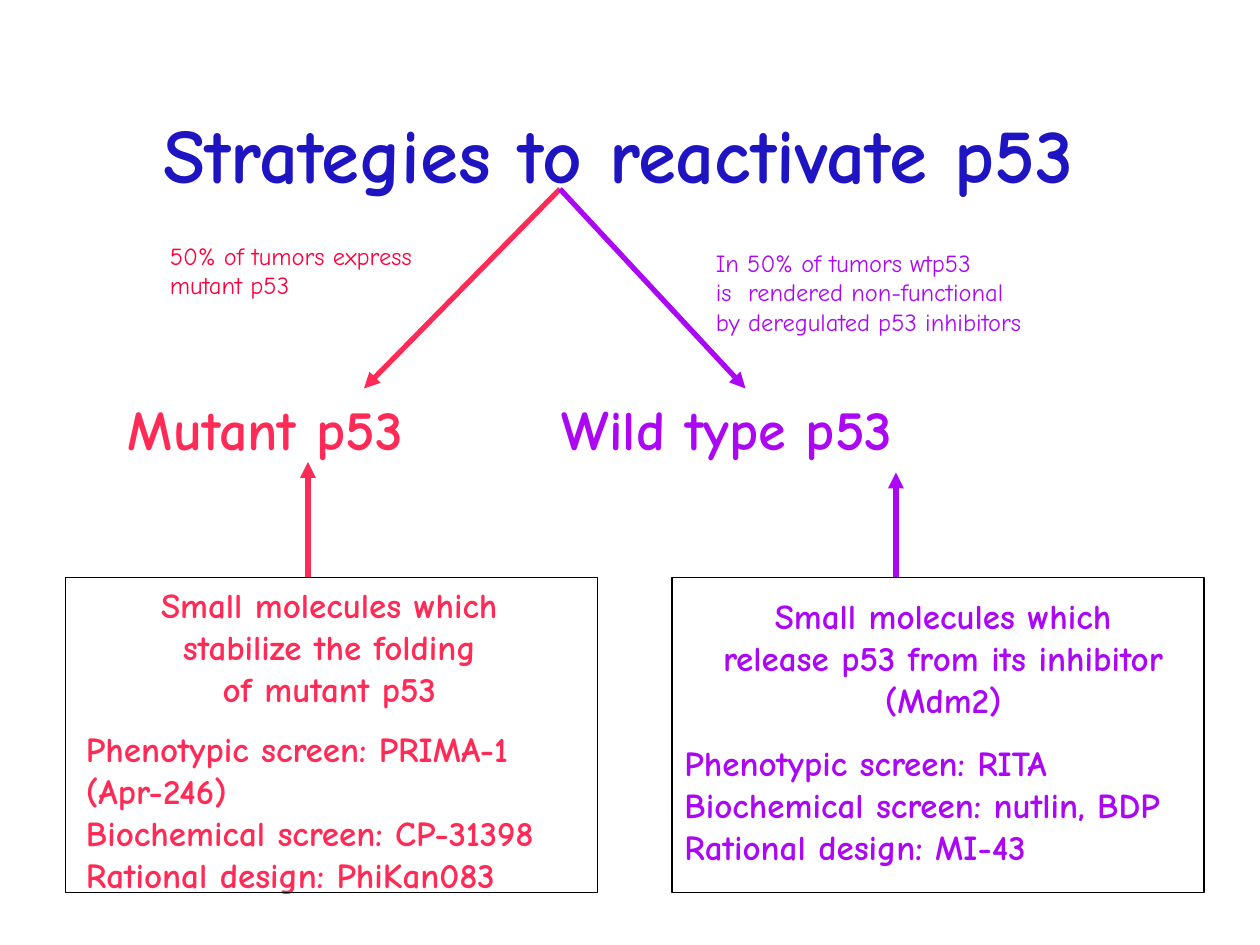
from dataclasses import dataclass

from lxml import etree
from pptx import Presentation
from pptx.dml.color import RGBColor
from pptx.enum.shapes import MSO_CONNECTOR, MSO_SHAPE
from pptx.enum.text import MSO_ANCHOR, PP_ALIGN
from pptx.oxml.ns import qn
from pptx.slide import Slide
from pptx.text.text import _Paragraph, _Run
from pptx.util import Inches, Pt

LEFT = PP_ALIGN.LEFT
CENTER = PP_ALIGN.CENTER
TOP = MSO_ANCHOR.TOP
MIDDLE = MSO_ANCHOR.MIDDLE
STRAIGHT = MSO_CONNECTOR.STRAIGHT
RECTANGLE = MSO_SHAPE.RECTANGLE

BLUE = RGBColor(0x1F, 0x14, 0xC2)
RED = RGBColor(0xFF, 0x2B, 0x56)
CRIMSON = RGBColor(0xFF, 0x00, 0x3C)
PURPLE = RGBColor(0xAC, 0x07, 0xF5)
BLACK = RGBColor(0x00, 0x00, 0x00)

FONT = "Comic Neue"
SLIDE_WIDTH = Inches(10)
SLIDE_HEIGHT = Inches(7.5)
COLUMN = SLIDE_WIDTH // 120
ROW = SLIDE_HEIGHT // 90

FORK = (53.33, 18)
PANEL_TOP = 55
PANEL_WIDTH = 50.67
PANEL_HEIGHT = 30
PANEL_COLUMNS = (6.25, 64)


@dataclass(frozen=True)
class TextBlock:
    column: float
    row: float
    width: float
    height: float
    lines: tuple[str, ...]
    size: int
    color: RGBColor
    bold: bool = True
    alignment: PP_ALIGN = LEFT
    anchor: MSO_ANCHOR = TOP


@dataclass(frozen=True)
class Arrow:
    start: tuple[float, float]
    end: tuple[float, float]
    color: RGBColor


TITLE = TextBlock(4.25, 7, 109.33, 15, ("Strategies to reactivate p53",), 44, BLUE,
                  alignment=CENTER, anchor=MIDDLE)
BRANCH_NAMES = TextBlock(11, 37, 92.5, 8, ("Mutant p53",), 32, RED)
WILD_TYPE_TAB = 41.33

TEXT_BLOCKS = (
    TITLE,
    TextBlock(15, 22.33, 27.25, 7,
              ("50% of tumors express", "mutant p53"), 14, CRIMSON, bold=False),
    TextBlock(67, 23, 35, 10,
              ("In 50% of tumors wtp53", "is  rendered non-functional",
               "by deregulated p53 inhibitors"), 14, PURPLE, bold=False),
    TextBlock(13, 55, 36.75, 13.75,
              ("Small molecules which", "stabilize the folding", "of mutant p53"),
              20, RED, alignment=CENTER),
    TextBlock(65, 56, 49.67, 13.75,
              ("Small molecules which", "release p53 from its inhibitor", "(Mdm2)"),
              20, PURPLE, alignment=CENTER),
    TextBlock(7, 68.67, 49.67, 17.33,
              ("Phenotypic screen: PRIMA-1", "(Apr-246)",
               "Biochemical screen: CP-31398", "Rational design: PhiKan083"), 20, RED),
    TextBlock(64, 70, 49.67, 13.75,
              ("Phenotypic screen: RITA", "Biochemical screen: nutlin, BDP",
               "Rational design: MI-43"), 20, PURPLE),
)

ARROWS = (
    Arrow(FORK, (34.67, 37), RED),
    Arrow(FORK, (71, 37), PURPLE),
    Arrow((29.33, PANEL_TOP), (29.33, 44), RED),
    Arrow((85.33, PANEL_TOP), (85.33, 45), PURPLE),
)


def across(columns: float) -> int:
    return round(columns * COLUMN)


def down(rows: float) -> int:
    return round(rows * ROW)


def format_run(run: _Run, block: TextBlock, color: RGBColor) -> None:
    run.font.name = FONT
    run.font.size = Pt(block.size)
    run.font.bold = block.bold
    run.font.color.rgb = color


def draw_text(slide: Slide, block: TextBlock) -> _Paragraph:
    shape = slide.shapes.add_textbox(across(block.column), down(block.row),
                                     across(block.width), down(block.height))
    text_frame = shape.text_frame
    text_frame.word_wrap = True
    text_frame.vertical_anchor = block.anchor
    text_frame.text = "\n".join(block.lines)
    for paragraph in text_frame.paragraphs:
        paragraph.alignment = block.alignment
        for run in paragraph.runs:
            format_run(run, block, block.color)
    return text_frame.paragraphs[0]


def draw_branch_names(slide: Slide) -> None:
    paragraph = draw_text(slide, BRANCH_NAMES)
    run = paragraph.add_run()
    run.text = "\tWild type p53"
    format_run(run, BRANCH_NAMES, PURPLE)
    tab_stops = etree.SubElement(paragraph._p.get_or_add_pPr(), qn("a:tabLst"))
    etree.SubElement(tab_stops, qn("a:tab"), pos=str(across(WILD_TYPE_TAB)), algn="l")


def draw_arrow(slide: Slide, arrow: Arrow) -> None:
    connector = slide.shapes.add_connector(
        STRAIGHT, across(arrow.start[0]), down(arrow.start[1]),
        across(arrow.end[0]), down(arrow.end[1]))
    connector.line.color.rgb = arrow.color
    connector.line.width = Pt(3)
    etree.SubElement(connector.line._get_or_add_ln(), qn("a:tailEnd"), type="triangle")
    etree.SubElement(connector._element.spPr, qn("a:effectLst"))


def draw_panel(slide: Slide, column: float) -> None:
    shape = slide.shapes.add_shape(RECTANGLE, across(column), down(PANEL_TOP),
                                   across(PANEL_WIDTH), down(PANEL_HEIGHT))
    shape.shadow.inherit = False
    shape.fill.background()
    shape.line.color.rgb = BLACK
    shape.line.width = Pt(1)


def main() -> None:
    presentation = Presentation()
    presentation.slide_width = SLIDE_WIDTH
    presentation.slide_height = SLIDE_HEIGHT
    slide = presentation.slides.add_slide(presentation.slide_layouts[6])
    for arrow in ARROWS:
        draw_arrow(slide, arrow)
    for block in TEXT_BLOCKS:
        draw_text(slide, block)
    draw_branch_names(slide)
    for column in PANEL_COLUMNS:
        draw_panel(slide, column)
    presentation.save("out.pptx")


if __name__ == "__main__":
    main()
